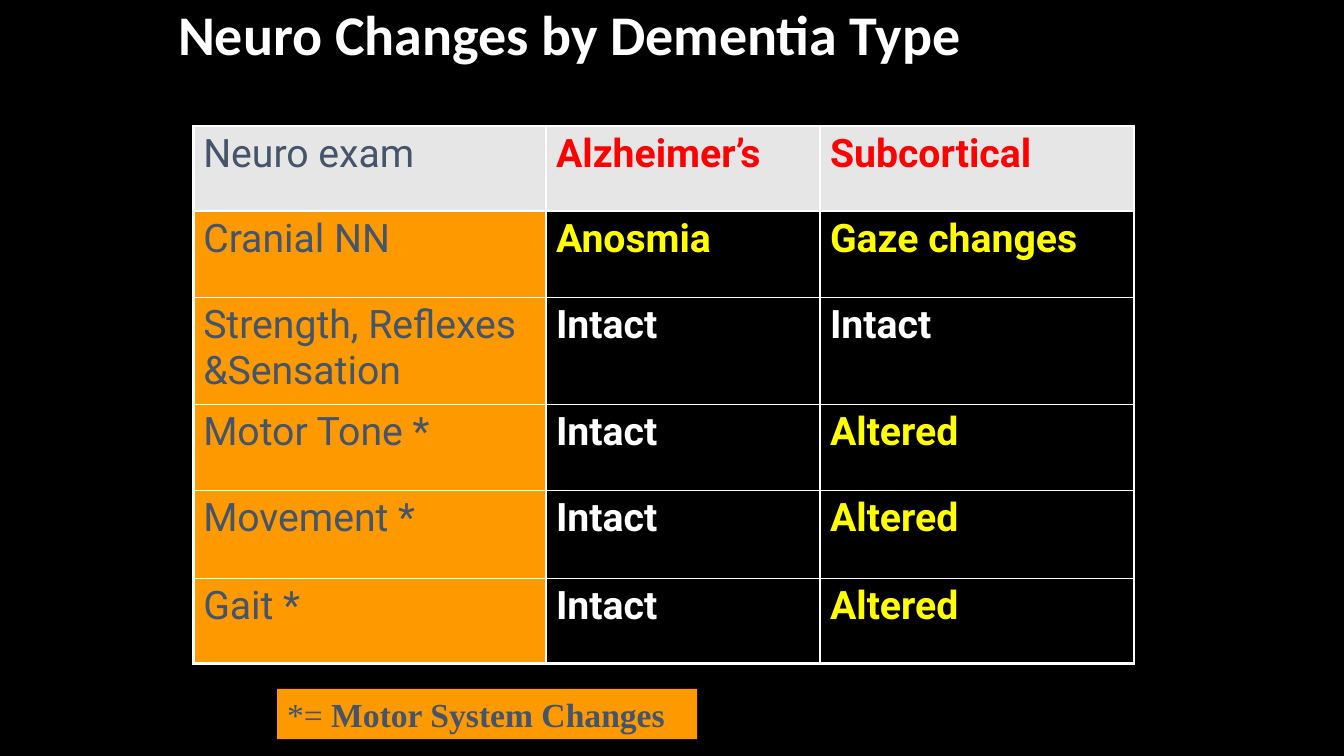
from lxml import etree
from pptx import Presentation
from pptx import util as u
from pptx.dml.color import RGBColor
from pptx.enum import shapes, text
from pptx.oxml.ns import qn

EMU_PER_PX = 9525
BLACK = RGBColor(0x00, 0x00, 0x00)
WHITE = RGBColor(0xFF, 0xFF, 0xFF)
ORANGE = RGBColor(0xFF, 0x99, 0x00)
GREY = RGBColor(0xE7, 0xE6, 0xE6)
SLATE = RGBColor(0x44, 0x54, 0x6A)
RED = RGBColor(0xFF, 0x00, 0x00)
YELLOW = RGBColor(0xFF, 0xFF, 0x00)

INNER_LINE, OUTER_LINE = 1, 2.25
COLUMN_WIDTHS = [336, 261, 299]
ROW_HEIGHTS = [81, 82, 102, 82, 84, 81]
EXAM_ROWS = [
    ("Neuro exam", "Alzheimer’s", "Subcortical"),
    ("Cranial NN", "Anosmia", "Gaze changes"),
    ("Strength, Reflexes &Sensation", "Intact", "Intact"),
    ("Motor Tone *", "Intact", "Altered"),
    ("Movement *", "Intact", "Altered"),
    ("Gait *", "Intact", "Altered"),
]


def px(length):
    return u.Emu(length * EMU_PER_PX)


def add_text(paragraph, content, *, font, size, color, bold=False):
    run = paragraph.add_run()
    run.text = content
    run.font.name = font
    run.font.size = u.Pt(size)
    run.font.color.rgb = color
    run.font.bold = bold


def set_borders(cell, color, widths):
    """Draw the cell's edges; widths are points for left, right, top, bottom."""
    properties = cell._tc.get_or_add_tcPr()
    for position, (edge, width) in enumerate(zip("LRTB", widths)):
        line = etree.Element(qn(f"a:ln{edge}"), w=str(u.Pt(width)))
        fill = etree.SubElement(line, qn("a:solidFill"))
        etree.SubElement(fill, qn("a:srgbClr"), val=str(color))
        properties.insert(position, line)


def exam_text_color(row, column, content):
    if column == 0:
        return SLATE
    if row == 0:
        return RED
    return WHITE if content == "Intact" else YELLOW


class ExamSlide:
    title_font = "Calibri"
    table_font = "Roboto"
    legend_font = "Times New Roman"

    def __init__(self, presentation):
        self.slide = presentation.slides.add_slide(presentation.slide_layouts[5])
        background = self.slide.background.fill
        background.solid()
        background.fore_color.rgb = BLACK

    def title(self, content, left, top, width, height):
        heading = self.slide.shapes.title
        heading.left, heading.top = px(left), px(top)
        heading.width, heading.height = px(width), px(height)
        frame = heading.text_frame
        frame.auto_size = text.MSO_AUTO_SIZE.NONE
        frame.vertical_anchor = text.MSO_ANCHOR.MIDDLE
        line = frame.paragraphs[0]
        line.alignment = text.PP_ALIGN.LEFT
        line.line_spacing = 0.9
        add_text(line, content, font=self.title_font, size=40, color=WHITE, bold=True)

    def exam_table(self, rows, left, top):
        table = self.slide.shapes.add_table(
            len(rows), len(COLUMN_WIDTHS), px(left), px(top),
            px(sum(COLUMN_WIDTHS)), px(sum(ROW_HEIGHTS))).table
        table.first_row = table.horz_banding = False
        for column, width in zip(table.columns, COLUMN_WIDTHS):
            column.width = px(width)
        for row, height in zip(table.rows, ROW_HEIGHTS):
            row.height = px(height)
        for r, findings in enumerate(rows):
            for c, content in enumerate(findings):
                self.exam_cell(table.cell(r, c), r, c, content)

    def exam_cell(self, cell, row, column, content):
        if row > 0 and column > 0:
            cell.fill.background()
        else:
            cell.fill.solid()
            cell.fill.fore_color.rgb = GREY if row == 0 else ORANGE
        outer_edges = (column == 0, column == len(COLUMN_WIDTHS) - 1,
                       row == 0, row == len(ROW_HEIGHTS) - 1)
        set_borders(cell, WHITE,
                    [OUTER_LINE if outer else INNER_LINE for outer in outer_edges])
        add_text(cell.text_frame.paragraphs[0], content, font=self.table_font, size=28,
                 color=exam_text_color(row, column, content), bold=column > 0)

    def legend(self, symbol, meaning, left, top, width, height):
        box = self.slide.shapes.add_shape(
            shapes.MSO_SHAPE.RECTANGLE, px(left), px(top), px(width), px(height))
        box.shadow.inherit = False
        box.fill.solid()
        box.fill.fore_color.rgb = ORANGE
        box.line.fill.background()
        frame = box.text_frame
        frame.word_wrap = True
        frame.vertical_anchor = text.MSO_ANCHOR.TOP
        line = frame.paragraphs[0]
        line.alignment = text.PP_ALIGN.LEFT
        for content, bold in ((symbol, False), (meaning, True)):
            add_text(line, content, font=self.legend_font, size=24, color=SLATE, bold=bold)


def main():
    presentation = Presentation()
    presentation.slide_width, presentation.slide_height = px(1280), px(720)
    exam = ExamSlide(presentation)
    exam.title("Neuro Changes by Dementia Type", 160, -24, 936, 120)
    exam.exam_table(EXAM_ROWS, 184, 120)
    exam.legend("*= ", "Motor System Changes", 264, 656, 400, 48)
    presentation.save("out.pptx")


if __name__ == "__main__":
    main()
